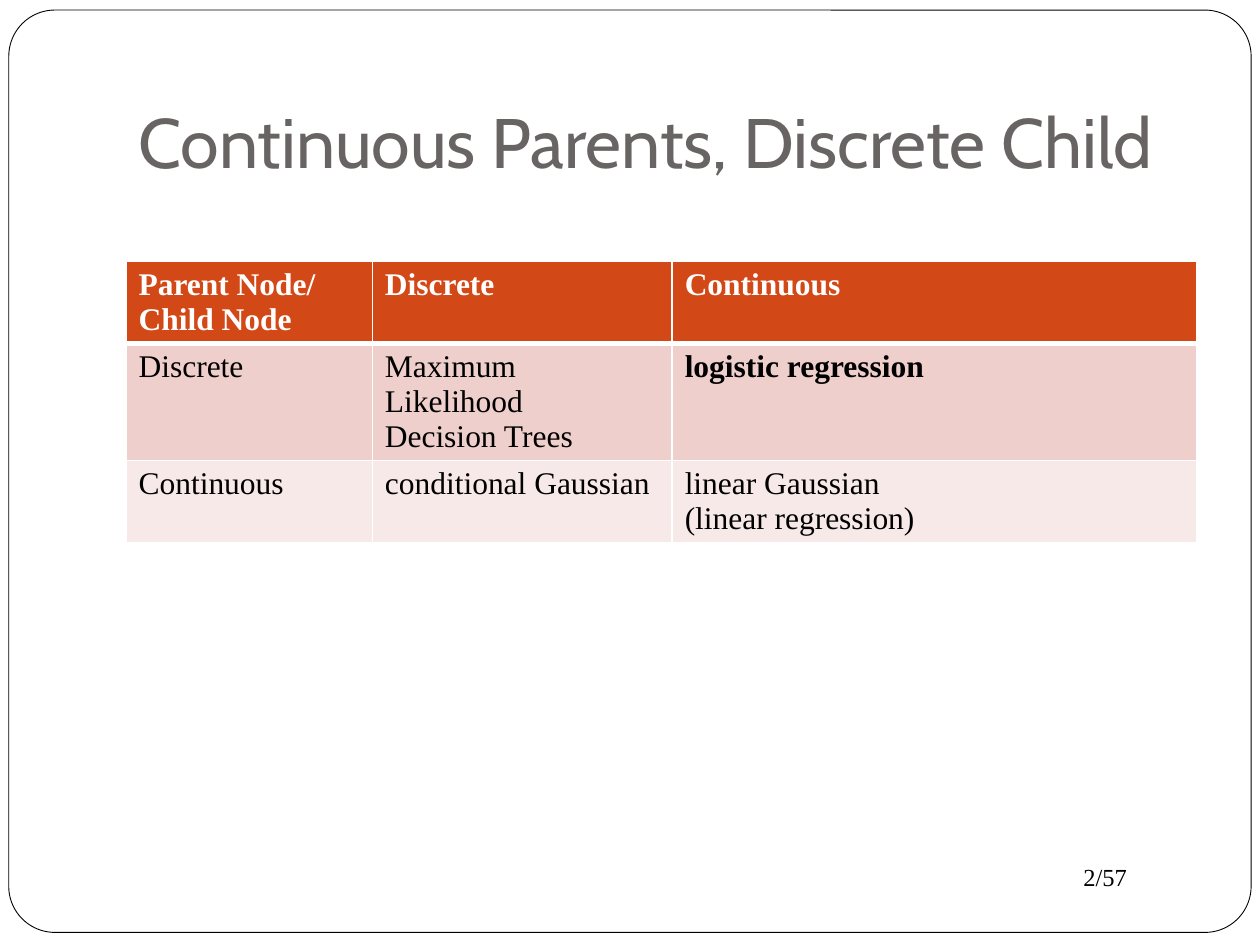
from dataclasses import dataclass

from lxml import etree
from pptx import Presentation
from pptx.dml.color import RGBColor
from pptx.enum.shapes import MSO_SHAPE
from pptx.enum.text import MSO_ANCHOR, MSO_AUTO_SIZE, PP_ALIGN
from pptx.oxml.ns import qn
from pptx.util import Inches, Pt

ROUNDED = MSO_SHAPE.ROUNDED_RECTANGLE
BOTTOM, TOP = MSO_ANCHOR.BOTTOM, MSO_ANCHOR.TOP
NO_AUTOFIT = MSO_AUTO_SIZE.NONE
LEFT = PP_ALIGN.LEFT
TITLE_ONLY = 5
WIDTH, HEIGHT = 10, 7.5


@dataclass(frozen=True)
class Theme:
    paper: str = "FFFFFF"
    ink: str = "000000"
    title: str = "696464"
    header: str = "D34817"
    bands: tuple = ("EFCFCC", "F7E9E8")
    title_font: str = "Cabin"
    body_font: str = "Times New Roman"
    title_size: int = 40
    table_size: int = 18
    number_size: int = 14


THEME = Theme()

# A vertical tab is a line break inside a paragraph.
MODELS = [
    ["Parent Node/\vChild Node", "Discrete", "Continuous"],
    ["Discrete", "Maximum Likelihood\vDecision Trees", "logistic regression"],
    ["Continuous", "conditional Gaussian", "linear Gaussian\v(linear regression)"],
]
HIGHLIGHT = (1, 2)
COLUMN_SHARES = (0.23, 0.28, 0.49)
ROW_HEIGHTS = (0.64, 0.93, 0.65)


def inches(box):
    return [Inches(length) for length in box]


def write(frame, text, font, size, color, bold=False):
    frame.text = text
    paragraph = frame.paragraphs[0]
    paragraph.alignment = LEFT
    for run in paragraph.runs:
        formats = {"name": font, "size": Pt(size), "bold": bold}
        for attribute, value in formats.items():
            setattr(run.font, attribute, value)
        run.font.color.rgb = RGBColor.from_string(color)


def add_frame(slide, box):
    frame = slide.shapes.add_shape(ROUNDED, *inches(box))
    frame.shadow.inherit = False
    frame.adjustments[0] = 0.05
    frame.fill.solid()
    frame.fill.fore_color.rgb = RGBColor.from_string(THEME.paper)
    frame.line.color.rgb = RGBColor.from_string(THEME.ink)
    frame.line.width = Pt(0.5)
    # The frame lies behind the title.
    slide.shapes._spTree.insert(2, frame._element)


def place_title(slide, box, text):
    title = slide.shapes.title
    for side, length in zip(("left", "top", "width", "height"), inches(box)):
        setattr(title, side, length)
    formats = {
        "word_wrap": True,
        "auto_size": NO_AUTOFIT,
        "vertical_anchor": BOTTOM,
        "margin_left": Inches(0.1),
        "margin_top": Inches(0.05),
        "margin_right": Inches(0.1),
        "margin_bottom": Inches(0.1),
    }
    for attribute, value in formats.items():
        setattr(title.text_frame, attribute, value)
    write(title.text_frame, text, THEME.title_font, THEME.title_size, THEME.title)


def set_borders(cell, widths):
    """Draw paper-coloured borders; widths are points by side, L R T B."""
    properties = cell._tc.get_or_add_tcPr()
    for position, (side, width) in enumerate(widths.items()):
        line = etree.Element(qn(f"a:ln{side}"), w=str(Pt(width)))
        fill = etree.SubElement(line, qn("a:solidFill"))
        etree.SubElement(fill, qn("a:srgbClr"), val=THEME.paper)
        properties.insert(position, line)


def add_model_table(slide, box):
    table = slide.shapes.add_table(len(MODELS), len(MODELS[0]), *inches(box)).table
    for column, share in zip(table.columns, COLUMN_SHARES):
        column.width = Inches(box[2] * share)
    for row, height in zip(table.rows, ROW_HEIGHTS):
        row.height = Inches(height)

    fills = (THEME.header, *THEME.bands)
    for r, labels in enumerate(MODELS):
        is_header = r == 0
        for c, label in enumerate(labels):
            cell = table.cell(r, c)
            cell.vertical_anchor = TOP
            cell.fill.solid()
            cell.fill.fore_color.rgb = RGBColor.from_string(fills[r])
            write(cell.text_frame, label, THEME.body_font, THEME.table_size,
                  THEME.paper if is_header else THEME.ink,
                  bold=is_header or (r, c) == HIGHLIGHT)
            set_borders(cell, {"L": 1, "R": 1,
                               "T": 3 if r == 1 else 1,
                               "B": 3 if is_header else 1})


def add_page_number(slide, box, text):
    frame = slide.shapes.add_textbox(*inches(box)).text_frame
    frame.word_wrap = True
    write(frame, text, THEME.body_font, THEME.number_size, THEME.ink)


def main():
    deck = Presentation()
    deck.slide_width, deck.slide_height = Inches(WIDTH), Inches(HEIGHT)
    slide = deck.slides.add_slide(deck.slide_layouts[TITLE_ONLY])

    left, content_width = 0.1 * WIDTH, 0.85 * WIDTH
    add_frame(slide, (0.07, 0.08, WIDTH - 0.14, HEIGHT - 0.18))
    place_title(slide, (left, 0.04 * HEIGHT, content_width, HEIGHT / 6),
                "Continuous Parents, Discrete Child")
    add_model_table(slide, (left, 2.07, content_width, sum(ROW_HEIGHTS)))
    add_page_number(slide, (0.85 * WIDTH, 6.79, 0.1 * WIDTH, 0.34), "2/57")
    deck.save("out.pptx")


if __name__ == "__main__":
    main()
